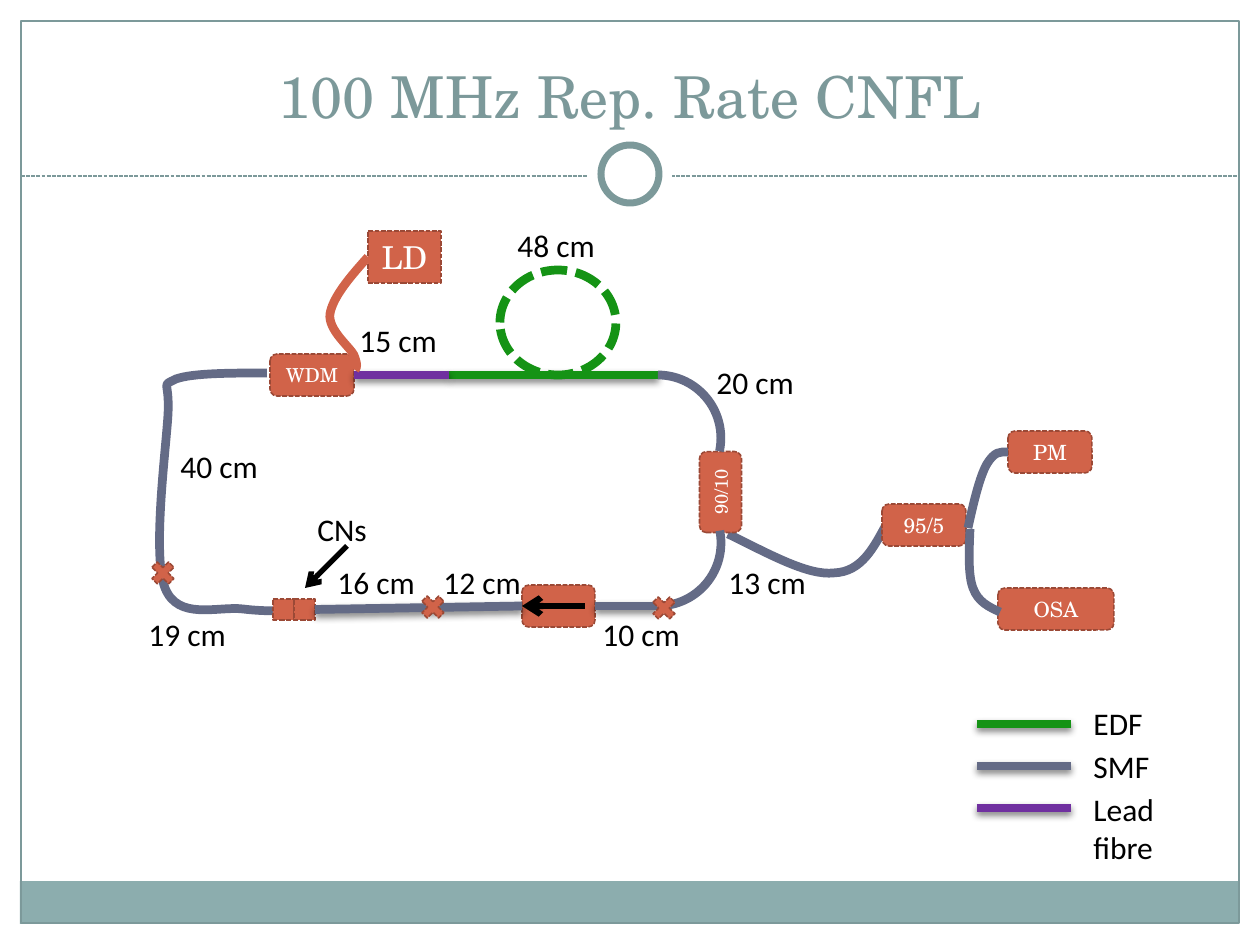
"""Build the fibre laser ring diagram slide."""
from lxml import etree
from pptx import Presentation
from pptx.dml.color import RGBColor
from pptx.enum.dml import MSO_LINE
from pptx.enum.shapes import MSO_CONNECTOR, MSO_SHAPE
from pptx.enum.text import MSO_ANCHOR, MSO_AUTO_SIZE, PP_ALIGN
from pptx.oxml.ns import qn
from pptx.util import Pt

PX = 914400 / 126
RECT, ROUND = MSO_SHAPE.RECTANGLE, MSO_SHAPE.ROUNDED_RECTANGLE
OVAL, ARC, CROSS = MSO_SHAPE.OVAL, MSO_SHAPE.ARC, MSO_SHAPE.MATH_MULTIPLY
DASH, STRAIGHT = MSO_LINE.SQUARE_DOT, MSO_CONNECTOR.STRAIGHT
LEFT, CENTER = PP_ALIGN.LEFT, PP_ALIGN.CENTER
TOP, MIDDLE, BOTTOM = MSO_ANCHOR.TOP, MSO_ANCHOR.MIDDLE, MSO_ANCHOR.BOTTOM
FIT = MSO_AUTO_SIZE.SHAPE_TO_FIT_TEXT
SERIF, SANS = "TeX Gyre Schola", "Calibri"
COLORS = {
    "white": "FFFFFF", "black": "000000", "theme": "7C999A", "footer": "8CADAE",
    "device": "D16349", "edge": "9B4936",
    "EDF": "159315", "SMF": "646B86", "Lead fibre": "7030A0",
}
FIBRE_WIDTH = 5

DEVICES = {
    "WDM": (ROUND, (270, 354, 84, 42), "WDM", 11, 0),
    "output coupler": (ROUND, (680, 471, 81, 42), "90/10", 10.5, 270),
    "isolator": (ROUND, (522, 585, 73, 42), "", 12, 0),
    "tap coupler": (ROUND, (882, 504, 84, 42), "95/5", 12, 0),
    "power meter": (ROUND, (1008, 431, 84, 42), "PM", 12, 0),
    "analyser": (ROUND, (998, 588, 116, 42), "OSA", 12, 0),
    "CN input": (RECT, (273, 599, 21, 21), "", 12, 0),
    "CN output": (RECT, (294, 599, 21, 21), "", 12, 0),
    "pump": (RECT, (368, 231, 73, 52), "LD", 18, 0),
}
SPLICES = [(648, 592), (417, 591), (147, 557)]
LENGTHS = [
    ("48 cm", 505, 220), ("20 cm", 704, 357), ("13 cm", 716, 557),
    ("10 cm", 590, 609), ("15 cm", 347, 315), ("12 cm", 431, 557),
    ("16 cm", 325, 557), ("19 cm", 136, 609), ("40 cm", 168, 441),
    ("CNs", 305, 504),
]
RING_CURVE = [
    (267, 373), (231, 373), (193, 373), (176, 379), (160, 387), (170, 379),
    (168, 415), (166, 449), (152, 556), (165, 588), (178, 621), (218, 606),
    (243, 609), (267, 612), (290, 611), (311, 609),
]
TAP_CURVE = [(728, 534), (769, 554), (808, 576), (834, 573),
             (862, 572), (874, 547), (887, 523)]
METER_CURVE = [(968, 528), (974, 501), (980, 476), (987, 464),
               (995, 451), (1000, 452), (1008, 452)]
ANALYSER_CURVE = [(970, 529), (969, 552), (968, 575), (973, 588),
                  (978, 602), (989, 607), (1000, 612)]
PUMP_CURVE = [(368, 257), (350, 277), (333, 297), (330, 314), (328, 330),
              (350, 347), (354, 355), (358, 365), (357, 368), (355, 370)]


def emu(*lengths):
    """Turn px into EMU."""
    return [round(length * PX) for length in lengths]


def set_all(target, values):
    """Set each attribute named in a dict."""
    for key, value in values.items():
        setattr(target, key, value)


def paint_line(line, color, width, dash=None):
    """Give a line its colour, width and dash."""
    line.fill.solid()
    line.color.rgb = RGBColor.from_string(COLORS[color])
    set_all(line, {"width": Pt(width), "dash_style": dash})


def write(shape, text, font, size, color, align=LEFT, **frame_format):
    """Write one styled paragraph in a shape."""
    set_all(shape.text_frame, frame_format)
    paragraph = shape.text_frame.paragraphs[0]
    paragraph.alignment = align
    run = paragraph.add_run()
    run.text = text
    set_all(run.font, {"name": font, "size": Pt(size)})
    run.font.color.rgb = RGBColor.from_string(COLORS[color])


def add_figure(slide, kind, box, fill=None, line=None):
    """Add a preset shape with optional fill and (color, width, dash) line."""
    figure = slide.shapes.add_shape(kind, *emu(*box))
    figure.shadow.inherit = False
    if fill:
        figure.fill.solid()
        figure.fill.fore_color.rgb = RGBColor.from_string(COLORS[fill])
    else:
        figure.fill.background()
    if line:
        paint_line(figure.line, *line)
    else:
        figure.line.fill.background()
    return figure


def add_device(slide, kind, box, text="", size=12, rotation=0):
    """Add an optical component with its caption."""
    device = add_figure(slide, kind, box, "device", ("edge", 0.9, DASH))
    device.rotation = rotation
    if text:
        write(device, text, SERIF, size, "white", CENTER, word_wrap=False,
              vertical_anchor=MIDDLE, margin_left=0, margin_right=0)
    return device


def add_label(slide, text, left, top, width=116):
    """Add a plain caption."""
    label = slide.shapes.add_textbox(*emu(left, top, width, 50))
    write(label, text, SANS, 18, "black", word_wrap=True,
          vertical_anchor=TOP, auto_size=FIT)


def add_line(slide, start, end, color, width=FIBRE_WIDTH, dash=None,
             shadow=False, arrow=False, begin=None, finish=None):
    """Add a straight line, joined to (shape, site) where given."""
    connector = slide.shapes.add_connector(STRAIGHT, *emu(*start, *end))
    paint_line(connector.line, color, width, dash)
    if begin:
        connector.begin_connect(*begin)
    if finish:
        connector.end_connect(*finish)
    if arrow:
        outline = connector.line._get_or_add_ln()
        etree.SubElement(outline, qn("a:tailEnd"), type="arrow")
    effects = etree.SubElement(connector._element.spPr, qn("a:effectLst"))
    if shadow:
        outer = etree.SubElement(effects, qn("a:outerShdw"), blurRad="50800",
                                 dist="25400", dir="5400000", rotWithShape="0")
        tint = etree.SubElement(outer, qn("a:srgbClr"), val=COLORS["black"])
        etree.SubElement(tint, qn("a:alpha"), val="45000")


def add_curve(slide, points, color="SMF"):
    """Add a fibre through chained cubic Bézier points."""
    builder = slide.shapes.build_freeform(*points[0], scale=PX)
    builder.add_line_segments(points[1:], close=False)
    fibre = builder.convert_to_shape()
    fibre.shadow.inherit = False
    fibre.fill.background()
    paint_line(fibre.line, color, FIBRE_WIDTH)
    steps = fibre._element.xpath(".//a:lnTo")
    for first, second, third in zip(steps[::3], steps[1::3], steps[2::3]):
        first.tag = qn("a:cubicBezTo")
        for step in (second, third):
            first.append(step[0])
            step.getparent().remove(step)


def add_bend(slide, top, angles, rotation=0):
    """Add a quarter bend of fibre."""
    bend = add_figure(slide, ARC, (595, top, 126, 126),
                      line=("SMF", FIBRE_WIDTH))
    bend.rotation = rotation
    for index, angle in enumerate(angles):
        bend.adjustments[index] = angle


def add_frame(slide):
    """Add the page frame and title."""
    add_figure(slide, RECT, (20, 881, 1218, 43), "footer")
    add_figure(slide, RECT, (21, 21, 1218, 902), line=("theme", 0.75))
    add_line(slide, (21, 176), (1239, 176), "theme", 0.75, DASH)
    add_figure(slide, OVAL, (588, 132, 84, 84), "white")
    add_figure(slide, OVAL, (601, 145, 58, 58), "white", ("theme", 4))
    title = slide.shapes.add_textbox(*emu(42, 31, 1176, 105))
    write(title, "100 MHz Rep. Rate CNFL", SERIF, 33, "theme", CENTER,
          word_wrap=True, vertical_anchor=BOTTOM)


def add_ring(slide):
    """Add the laser ring, its pump and its outputs."""
    for points in (RING_CURVE, TAP_CURVE):
        add_curve(slide, points)
    devices = {part: add_device(slide, *values)
               for part, values in DEVICES.items()}
    isolator = devices["isolator"]
    add_line(slide, (449, 375), (658, 375), "EDF", shadow=True)
    add_line(slide, (354, 375), (449, 375), "Lead fibre", shadow=True,
             begin=(devices["WDM"], 3))
    add_figure(slide, OVAL, (500, 270, 116, 105),
               line=("EDF", FIBRE_WIDTH, DASH))
    add_bend(slide, 375, (162, 7.28))
    add_line(slide, (595, 606), (658, 606), "SMF", shadow=True,
             begin=(isolator, 3))
    add_bend(slide, 480, (155.25, 0), 90)
    add_line(slide, (585, 606), (522, 606), "black", 3.5, arrow=True,
             finish=(isolator, 1))
    add_line(slide, (315, 609), (522, 606), "SMF", shadow=True,
             begin=(devices["CN output"], 3), finish=(isolator, 1))
    for points in (METER_CURVE, ANALYSER_CURVE):
        add_curve(slide, points)
    add_curve(slide, PUMP_CURVE, "device")
    for left, top in SPLICES:
        add_device(slide, CROSS, (left, top, 32, 32))
    add_line(slide, (347, 546), (305, 588), "black", 3, arrow=True)
    for label in LENGTHS:
        add_label(slide, *label)


def add_legend(slide):
    """Add the key of fibre types."""
    for row, fibre in enumerate(("EDF", "SMF", "Lead fibre")):
        y = 724 + 42 * row
        add_line(slide, (977, y), (1071, y), fibre, shadow=True)
        add_label(slide, fibre, 1081, 698 + 43 * row, 144)


def main():
    """Build and save the slide."""
    deck = Presentation()
    deck.slide_width, deck.slide_height = emu(1260, 945)
    slide = deck.slides.add_slide(deck.slide_layouts[6])
    add_frame(slide)
    add_ring(slide)
    add_legend(slide)
    deck.save("out.pptx")


if __name__ == "__main__":
    main()
